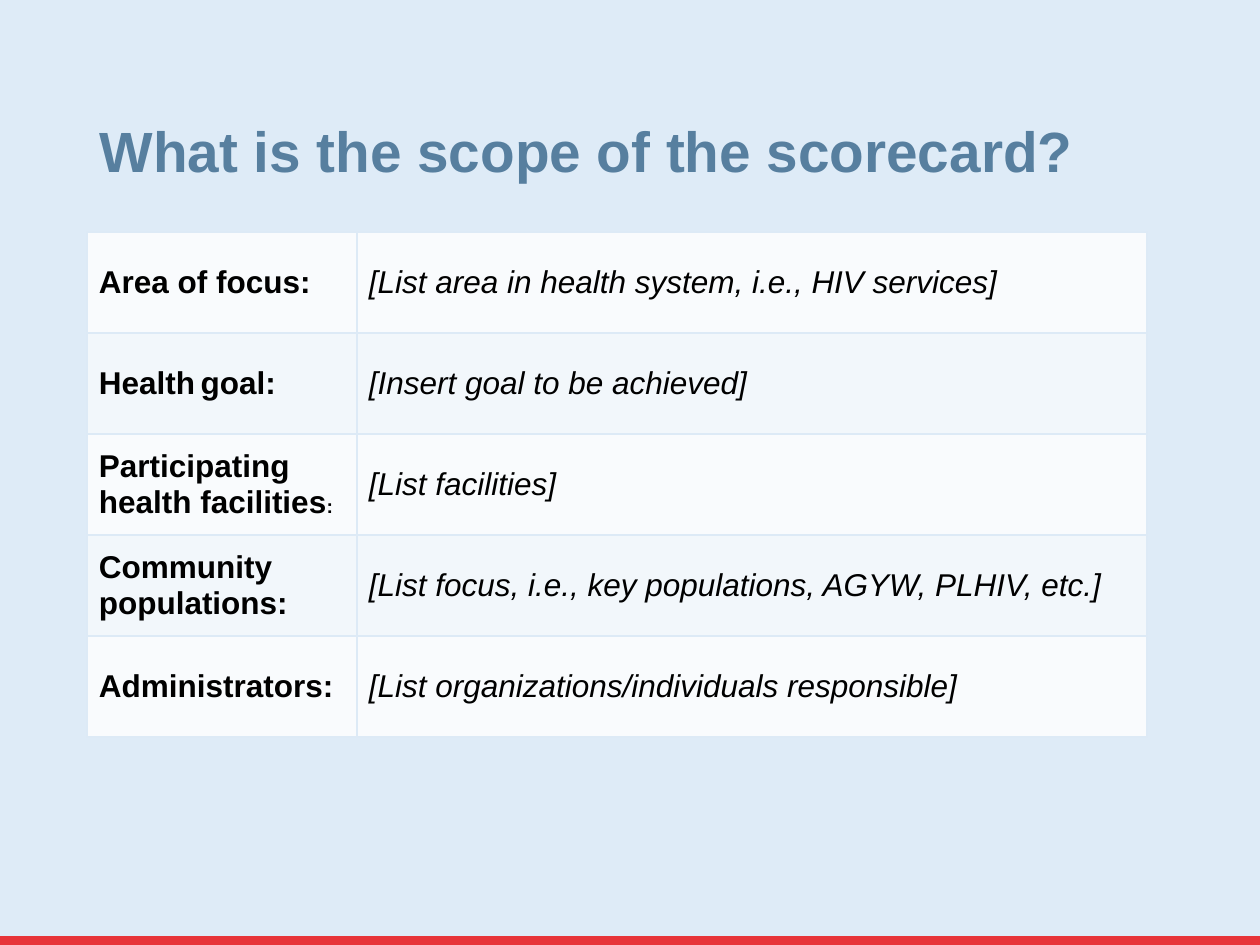
import pptx
import pptx.util
import pptx.dml.color
import pptx.enum.shapes
import pptx.enum.text
from dataclasses import dataclass
from lxml import etree


@dataclass(frozen=True)
class Theme:
    font: str = "Arial"
    background: str = "DEEBF7"
    footer: str = "E73439"
    title: str = "577F9F"
    text: str = "000000"
    border: str = "DDEAF6"
    bands: tuple = ("F9FBFD", "F2F7FB")
    title_size: float = 32.4
    body_size: int = 18
    small_size: int = 11


theme = Theme()
PX = 914400 / 126
rgb = pptx.dml.color.RGBColor.from_string


def px(length):
    return pptx.util.Emu(round(length * PX))


def add_borders(cell, color, width):
    """Draw all four sides; call before the cell fill is set, as the schema orders them."""
    properties = cell._tc.get_or_add_tcPr()
    namespace = "{http://schemas.openxmlformats.org/drawingml/2006/main}"
    for side in ("lnL", "lnR", "lnT", "lnB"):
        line = etree.SubElement(properties, namespace + side, w=str(pptx.util.Pt(width)))
        fill = etree.SubElement(line, namespace + "solidFill")
        etree.SubElement(fill, namespace + "srgbClr", val=color)


presentation = pptx.Presentation()
presentation.slide_width, presentation.slide_height = px(1260), px(945)
slide = presentation.slides.add_slide(presentation.slide_layouts[5])
slide.background.fill.solid()
slide.background.fill.fore_color.rgb = rgb(theme.background)

footer = slide.shapes.add_shape(
    pptx.enum.shapes.MSO_SHAPE.RECTANGLE, px(0), px(936), px(1260), px(9))
footer.shadow.inherit = False
footer.fill.solid()
footer.fill.fore_color.rgb = rgb(theme.footer)
footer.line.fill.background()

# Each label is a list of (text, size) pieces
scope_rows = [
    ([("Area of focus:", theme.body_size)],
     "[List area in health system, i.e., HIV services]"),
    ([("Health", theme.body_size), (" ", theme.small_size), ("goal:", theme.body_size)],
     "[Insert goal to be achieved]"),
    ([("Participating health facilities", theme.body_size), (":", theme.small_size)],
     "[List facilities]"),
    ([("Community populations:", theme.body_size)],
     "[List focus, i.e., key populations, AGYW, PLHIV, etc.]"),
    ([("Administrators:", theme.body_size)],
     "[List organizations/individuals responsible]"),
]
column_widths = (270, 790)
row_height = 101

scope = slide.shapes.add_table(
    len(scope_rows), len(column_widths), px(87), px(232),
    px(sum(column_widths)), px(row_height * len(scope_rows))).table
scope.first_row = False
scope.horz_banding = False
for column, width in zip(scope.columns, column_widths):
    column.width = px(width)

for row_index, (label, answer) in enumerate(scope_rows):
    scope.rows[row_index].height = px(row_height)
    for column_index, pieces in enumerate((label, [(answer, theme.body_size)])):
        cell = scope.cell(row_index, column_index)
        add_borders(cell, theme.border, 1)
        cell.fill.solid()
        cell.fill.fore_color.rgb = rgb(theme.bands[row_index % 2])
        cell.vertical_anchor = pptx.enum.text.MSO_ANCHOR.MIDDLE
        cell.margin_left = cell.margin_right = px(12)
        cell.margin_top = cell.margin_bottom = px(12)
        for text, size in pieces:
            run = cell.text_frame.paragraphs[0].add_run()
            run.text = text
            run.font.name = theme.font
            run.font.size = pptx.util.Pt(size)
            run.font.color.rgb = rgb(theme.text)
            run.font.bold = column_index == 0
            run.font.italic = column_index == 1

title = slide.shapes.title
title.left, title.top, title.width, title.height = px(87), px(81), px(1086), px(110)
title.text_frame.text = "What is the scope of the scorecard?"
title.text_frame.word_wrap = True
title.text_frame.auto_size = pptx.enum.text.MSO_AUTO_SIZE.NONE
title.text_frame.vertical_anchor = pptx.enum.text.MSO_ANCHOR.BOTTOM
heading = title.text_frame.paragraphs[0]
heading.alignment = pptx.enum.text.PP_ALIGN.LEFT
heading.line_spacing = 0.9
heading_font = heading.runs[0].font
heading_font.name = theme.font
heading_font.size = pptx.util.Pt(theme.title_size)
heading_font.bold = True
heading_font.color.rgb = rgb(theme.title)

presentation.save("out.pptx")
